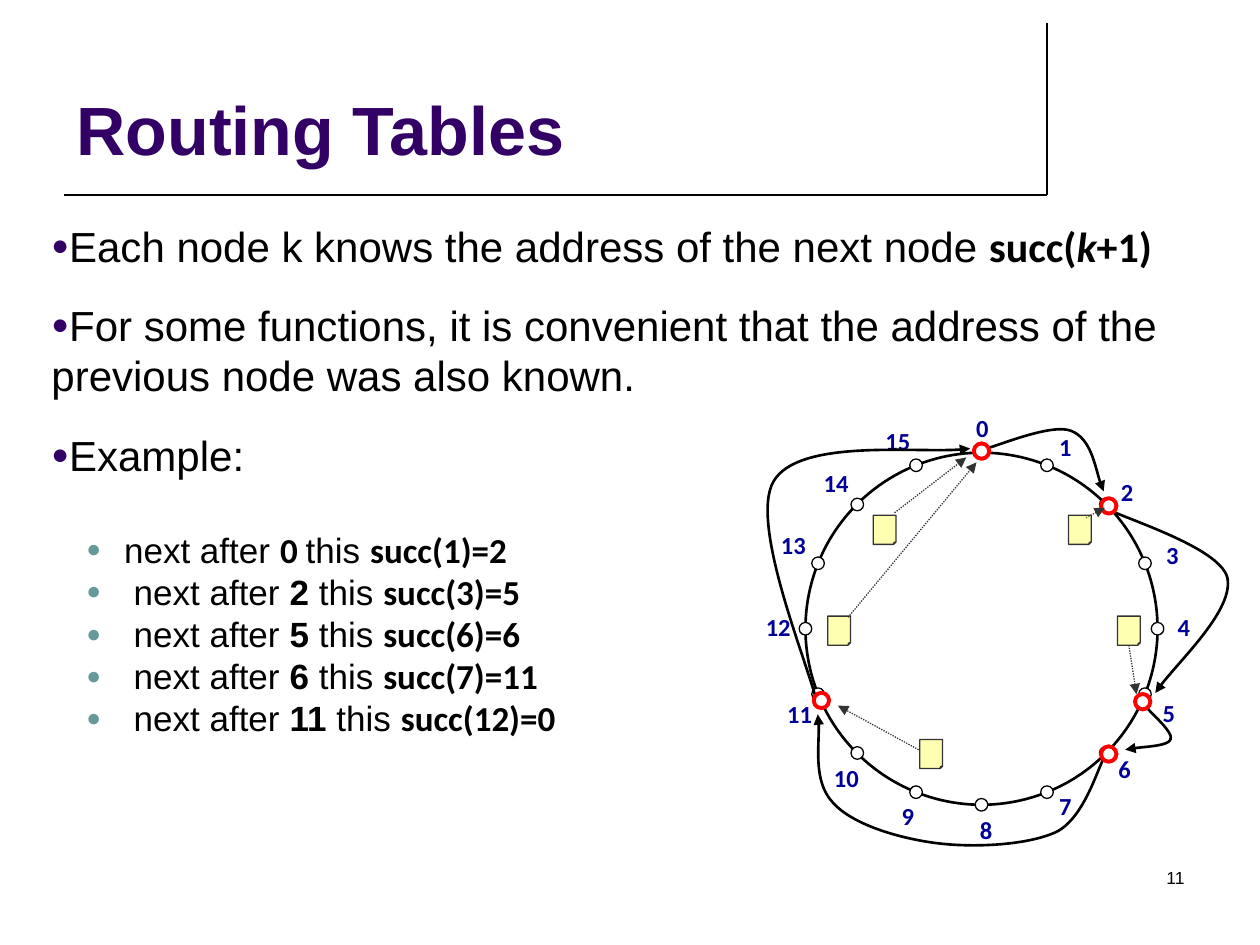
from dataclasses import dataclass

from lxml.etree import SubElement
from pptx import Presentation
from pptx.dml.color import RGBColor
from pptx.enum.dml import MSO_LINE
from pptx.enum.shapes import MSO_CONNECTOR, MSO_SHAPE
from pptx.enum.text import MSO_ANCHOR, PP_ALIGN
from pptx.oxml.ns import qn
from pptx.util import Pt


@dataclass(frozen=True)
class Theme:
    ink: str = "000000"
    title: str = "330066"
    sub_bullet: str = "669999"
    label: str = "000099"
    live: str = "FF0000"
    paper: str = "FFFFFF"
    note: str = "FFFF00"
    pointer: str = "333333"
    font: str = "Arial"
    accent_font: str = "Calibri"
    title_size: float = 39
    body_size: float = 24
    sub_size: float = 20
    label_size: float = 14
    number_size: float = 10


THEME = Theme()

# Ring geometry, in points from the ring region's corner
CENTER, RADIUS = (140.9, 129.3), 100.6
STEP_X = [0, 37.4, 71, 93.4, RADIUS]
LIVE_NODES = [(49.4, 170.3), (140.9, 27.8), (213.6, 59.1), (233, 171), (213.6, 200.9)]
LABELS = [(124.3, 6.2), (171.8, 17), (207.1, 42.9), (233, 78.9),
          (239.5, 119.9), (230.9, 168.9), (205.7, 201.3), (171.8, 222.2),
          (126.5, 235.8), (81.8, 227.9), (46.6, 206.3), (19.9, 169.6),
          (7.7, 119.9), (16.3, 73.1), (40.8, 37.8), (76.1, 13.4)]
# Note corner, pointer start, pointer end, side joined (if any)
NOTES = [((218.6, 122.1), (225.1, 138.7), (229.4, 166.7), 2),
         ((53, 122.1), (64.6, 122.8), (138, 34.2), None),
         ((79, 64.5), (91.2, 63), (132.2, 31.4), None),
         ((105.6, 192.6), (104.9, 198.4), (58.8, 173.2), None),
         ((190.6, 64.5), (200.6, 65.9), (211.4, 60.2), None)]
# Start point, then two controls and an end for each curve piece
SUCCESSOR_CURVES = [
    [(47.3, 173.2), (43, 152.3), (7.7, 69.5), (22.1, 45), (36.5, 20.6), (111.4, 29.9), (134.4, 26.3)],
    [(143.8, 26.3), (151.7, 24.2), (181.2, 11.9), (192, 16.2), (203.5, 20.6), (207.1, 43.6), (210.7, 50.8)],
    [(211.4, 60.2), (223, 66.6), (276.2, 82.5), (281.3, 99.8), (285.6, 117.8), (248.9, 152.3), (240.2, 166)],
    [(234.5, 173.2), (236.6, 176.8), (251, 188.3), (248.9, 192.6), (247.4, 196.2), (228.7, 197), (223, 198.4)],
    [(211.4, 202), (207.1, 209.2), (199.9, 236.6), (184.1, 245.2), (167.5, 253.1), (135.8, 254.6),
     (114.2, 251.7), (92.6, 248.8), (66.7, 240.9), (55.9, 228.6), (44.4, 216.4), (49.4, 188.3), (47.3, 178.2)],
]
EXAMPLES = [("0 ", "succ(1)=2"), ("2 ", "succ(3)=5"), ("5 ", "succ(6)=6"),
            ("6 ", "succ(7)=11"), ("11 ", "succ(12)=0")]


def set_line(shape, value, width, arrow=False):
    shape.line.color.rgb = RGBColor.from_string(value)
    shape.line.width = Pt(width)
    if arrow:
        SubElement(shape.line._get_or_add_ln(), qn("a:tailEnd"), type="triangle")


def add_line(page, start, end, value, width):
    line = page.shapes.add_connector(MSO_CONNECTOR.STRAIGHT, *map(Pt, start + end))
    set_line(line, value, width)
    SubElement(line._element.spPr, qn("a:effectLst"))
    return line


def add_solid(page, kind, box, fill, line, width):
    shape = page.shapes.add_shape(kind, *map(Pt, box))
    shape.shadow.inherit = False
    if fill:
        shape.fill.solid()
        shape.fill.fore_color.rgb = RGBColor.from_string(fill)
    else:
        shape.fill.background()
    set_line(shape, line, width)
    return shape


def add_circle(page, center, radius, fill, line, width):
    box = (center[0] - radius, center[1] - radius, 2 * radius, 2 * radius)
    add_solid(page, MSO_SHAPE.OVAL, box, fill, line, width)


def add_text_frame(page, box, anchor=MSO_ANCHOR.TOP):
    frame = page.shapes.add_textbox(*map(Pt, box)).text_frame
    frame.word_wrap = True
    frame.vertical_anchor = anchor
    return frame


def style(font, size, value, name=THEME.font, bold=False):
    font.size, font.name, font.bold = Pt(size), name, bold
    font.color.rgb = RGBColor.from_string(value)


def add_curve(page, points):
    """Draw cubic pieces: each three line ends become one curve."""
    corners = [(Pt(x), Pt(y)) for x, y in points]
    builder = page.shapes.build_freeform(*corners[0])
    builder.add_line_segments(corners[1:], close=False)
    curve = builder.convert_to_shape()
    outline = next(curve._element.iter(qn("a:path")))
    lines = outline.findall(qn("a:lnTo"))
    for first in range(0, len(lines), 3):
        piece = SubElement(outline, qn("a:cubicBezTo"))
        for line in lines[first:first + 3]:
            piece.extend(list(line))
            outline.remove(line)
    curve.shadow.inherit = False
    curve.fill.background()
    set_line(curve, THEME.ink, 1.5, arrow=True)


def add_bullet(frame, spans, size, bullet, before=0, margin=0, indent=0):
    para = frame.paragraphs[0]
    if para.runs:
        para = frame.add_paragraph()
    props = para._p.get_or_add_pPr()
    props.set("marL", str(Pt(margin)))
    props.set("indent", str(Pt(indent)))
    para.space_before = Pt(before)
    SubElement(SubElement(props, qn("a:buClr")), qn("a:srgbClr"), val=bullet)
    SubElement(props, qn("a:buSzPct"), val="70000")
    SubElement(props, qn("a:buFont"), typeface=THEME.font)
    SubElement(props, qn("a:buChar"), char="●")
    style(para.font, size, THEME.ink)
    for text, name, bold, italic in spans:
        span = para.add_run()
        span.text = text
        span.font.name, span.font.bold, span.font.italic = name, bold, italic


def build_header(page, box):
    left, top, width, height = box
    corner = (left + width, top + height)
    add_line(page, (left + width, top), corner, THEME.ink, 1)
    add_line(page, (left, top + height), corner, THEME.ink, 1)
    para = add_text_frame(page, (left, top - 3.6, width, 90.7), MSO_ANCHOR.BOTTOM).paragraphs[0]
    para.text = "Routing Tables"
    style(para.font, THEME.title_size, THEME.title, bold=True)


def build_body(page, box):
    frame = add_text_frame(page, box)
    frame.margin_top = Pt(13.5)
    plain, accent = THEME.font, THEME.accent_font
    points = [
        [("Each node k knows the address of the next node ", plain, False, False),
         ("succ(", accent, True, False), ("k", accent, True, True), ("+1)", accent, True, False)],
        [("For some functions, it is convenient that the address of the previous node was also known.",
          plain, False, False)],
        [("Example:", plain, False, False)]]
    for index, spans in enumerate(points):
        add_bullet(frame, spans, THEME.body_size, THEME.title, 16.5 if index else 0)
    for index, (node, successor) in enumerate(EXAMPLES):
        before, margin, node_font = (0, 47, plain) if index else (28, 41.5, accent)
        spans = [("next after ", plain, False, False), (node, node_font, True, False),
                 ("this ", plain, False, False), (successor, accent, True, False)]
        add_bullet(frame, spans, THEME.sub_size, THEME.sub_bullet, before, margin, 20 - margin)


def build_node_label(page, box, text):
    frame = add_text_frame(page, box, MSO_ANCHOR.MIDDLE)
    frame.margin_left = frame.margin_top = frame.margin_right = frame.margin_bottom = 0
    para = frame.paragraphs[0]
    para.text, para.alignment = text, PP_ALIGN.CENTER
    style(para.font, THEME.label_size, THEME.label, THEME.accent_font, bold=True)


def build_ring(page, left, top):
    def at(point):
        return left + point[0], top + point[1]

    # Circle and its sixteen positions
    add_circle(page, at(CENTER), RADIUS, None, THEME.ink, 1.5)
    for node, corner in enumerate(LABELS):
        step = min(node % 8, 8 - node % 8)
        across = STEP_X[step] * (1 if node < 8 else -1)
        down = STEP_X[4 - step] * (1 if 4 < node < 12 else -1)
        add_circle(page, at((CENTER[0] + across, CENTER[1] + down)), 3.6, THEME.paper, THEME.ink, 0.75)
        build_node_label(page, (*at(corner), 34, 16.5), str(node))
    # Successor arrows and live nodes
    for points in SUCCESSOR_CURVES:
        add_curve(page, [at(point) for point in points])
    for center in LIVE_NODES:
        add_circle(page, at(center), 4.4, THEME.paper, THEME.live, 2.25)
    # Stored items and pointers to their nodes
    for corner, start, end, side in NOTES:
        pointer = add_line(page, at(start), at(end), THEME.pointer, 0.75)
        pointer.line.dash_style = MSO_LINE.ROUND_DOT
        set_line(pointer, THEME.pointer, 0.75, arrow=True)
        note = add_solid(page, MSO_SHAPE.FOLDED_CORNER, (*at(corner), 13, 16.6), THEME.note, THEME.pointer, 0.75)
        guides = next(note._element.iter(qn("a:prstGeom"))).get_or_add_avLst()
        SubElement(guides, qn("a:gd"), name="adj", fmla="val 10800")
        SubElement(next(note._element.spPr.iter(qn("a:srgbClr"))), qn("a:alpha"), val="30000")
        if side is not None:
            pointer.begin_connect(note, side)


def build_page_number(page, box):
    para = add_text_frame(page, box).paragraphs[0]
    para.text, para.alignment = "11", PP_ALIGN.RIGHT
    style(para.font, THEME.number_size, THEME.ink)


deck = Presentation()
deck.slide_width, deck.slide_height = Pt(720), Pt(540)
slide = deck.slides.add_slide(deck.slide_layouts[6])
build_header(slide, (36.7, 13, 561.6, 98.6))
build_body(slide, (22.3, 112.3, 697.7, 427.7))
build_ring(slide, 420, 230)
build_page_number(slide, (516.2, 491.8, 167.8, 36))
deck.save("out.pptx")
